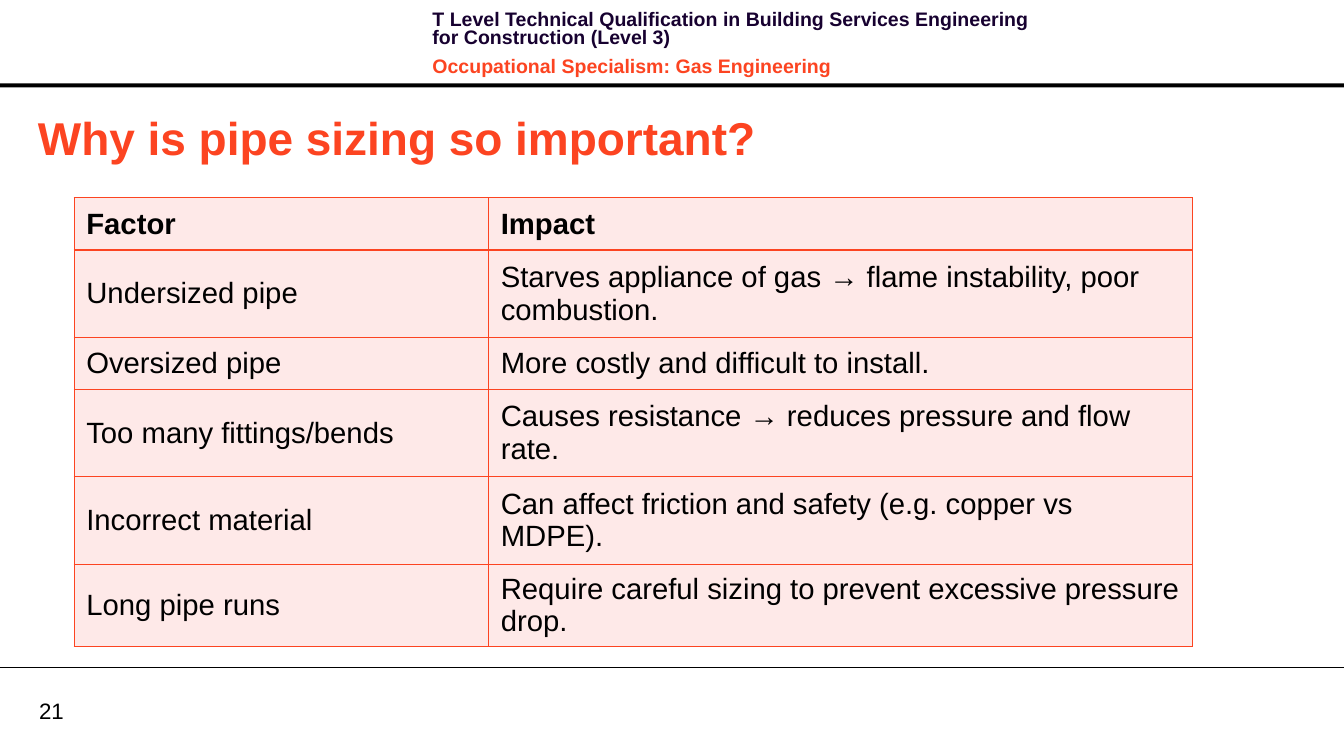
from dataclasses import dataclass

from lxml.etree import SubElement
from pptx import Presentation
from pptx.dml.color import RGBColor as Color
from pptx.enum.shapes import MSO_CONNECTOR as Connector, MSO_SHAPE as Shape
from pptx.enum.text import MSO_ANCHOR as Anchor
from pptx.oxml.ns import qn
from pptx.util import Inches, Pt

WIDTH, HEIGHT = Inches(13.39), Inches(7.48)


@dataclass(frozen=True)
class Theme:
    font: str = "Arial"
    accent: str = "FC4421"
    navy: str = "170130"
    black: str = "000000"
    cell: str = "FEE9E8"
    title_size: int = 33
    table_size: int = 21
    number_size: int = 16
    header_size: int = 14
    header_leading: float = 13.1


THEME = Theme()

HEADER = (
    ("T Level Technical Qualification in Building Services Engineering "
     "for Construction (Level 3)", THEME.navy),
    ("Occupational Specialism: Gas Engineering", THEME.accent),
)
FACTORS = (
    ("Factor", "Impact"),
    ("Undersized pipe",
     "Starves appliance of gas → flame instability, poor combustion."),
    ("Oversized pipe", "More costly and difficult to install."),
    ("Too many fittings/bends",
     "Causes resistance → reduces pressure and flow rate."),
    ("Incorrect material",
     "Can affect friction and safety (e.g. copper vs MDPE)."),
    ("Long pipe runs",
     "Require careful sizing to prevent excessive pressure drop."),
)
# Percentages of the slide's width and height
COLUMNS = (30.84, 52.35)
SHORT_ROW, TALL_ROW, LAST_ROW = 6.95, 11.63, 10.29
ROWS = (SHORT_ROW, TALL_ROW, SHORT_ROW, TALL_ROW, TALL_ROW, LAST_ROW)


def across(percent):
    return round(WIDTH * percent / 100)


def down(percent):
    return round(HEIGHT * percent / 100)


def area(left, top, width, height):
    return across(left), down(top), across(width), down(height)


def write(paragraph, text, size, color, bold=False):
    paragraph.text = text
    font = paragraph.font
    font.name, font.size, font.bold = THEME.font, Pt(size), bold
    font.color.rgb = Color.from_string(color)


def add_text_frame(slide, box, anchor=Anchor.MIDDLE):
    frame = slide.shapes.add_textbox(*box).text_frame
    frame.word_wrap = True
    frame.vertical_anchor = anchor
    return frame


def add_bar(slide, box):
    bar = slide.shapes.add_shape(Shape.RECTANGLE, *box)
    bar.shadow.inherit = False
    bar.fill.solid()
    bar.fill.fore_color.rgb = Color.from_string(THEME.black)
    bar.line.fill.background()


def add_rule(slide, top):
    rule = slide.shapes.add_connector(
        Connector.STRAIGHT, 0, down(top), WIDTH, down(top))
    rule.line.color.rgb = Color.from_string(THEME.black)
    rule.line.width = Pt(0.75)
    SubElement(rule._element.spPr, qn("a:effectLst"))


def add_header(slide, box):
    frame = add_text_frame(slide, box, Anchor.TOP)
    for index, (text, color) in enumerate(HEADER):
        paragraph = frame.add_paragraph() if index else frame.paragraphs[0]
        write(paragraph, text, THEME.header_size, color, bold=True)
        paragraph.line_spacing = Pt(THEME.header_leading)
        paragraph.space_before = Pt(4 if index else 0)
        paragraph.space_after = Pt(4)


def add_title(slide, box, text):
    paragraph = add_text_frame(slide, box).paragraphs[0]
    write(paragraph, text, THEME.title_size, THEME.accent, bold=True)
    paragraph.line_spacing = 0.9


def add_page_number(slide, box, number):
    frame = add_text_frame(slide, box)
    frame.margin_left = frame.margin_right = 0
    frame.margin_top = frame.margin_bottom = 0
    write(frame.paragraphs[0], number, THEME.number_size, THEME.black)


def style_cell(cell):
    cell.vertical_anchor = Anchor.MIDDLE
    cell.margin_left = cell.margin_right = Inches(0.12)
    cell.margin_top = cell.margin_bottom = Inches(0.06)
    # Borders come before the fill in the cell's properties
    properties = cell._tc.get_or_add_tcPr()
    for side in ("a:lnL", "a:lnR", "a:lnT", "a:lnB"):
        border = SubElement(properties, qn(side), w=str(Pt(1)))
        fill = SubElement(border, qn("a:solidFill"))
        SubElement(fill, qn("a:srgbClr"), val=THEME.accent)
    cell.fill.solid()
    cell.fill.fore_color.rgb = Color.from_string(THEME.cell)


def add_factor_table(slide, left, top):
    box = area(left, top, sum(COLUMNS), sum(ROWS))
    table = slide.shapes.add_table(len(ROWS), len(COLUMNS), *box).table
    table.horz_banding = False
    for column, width in zip(table.columns, COLUMNS):
        column.width = across(width)
    for index, (row, height) in enumerate(zip(table.rows, ROWS)):
        row.height = down(height)
        for cell, text in zip(row.cells, FACTORS[index]):
            style_cell(cell)
            write(cell.text_frame.paragraphs[0], text, THEME.table_size,
                  THEME.black, bold=index == 0)


def main():
    presentation = Presentation()
    presentation.slide_width, presentation.slide_height = WIDTH, HEIGHT
    slide = presentation.slides.add_slide(presentation.slide_layouts[6])

    # Header and footer
    add_bar(slide, area(0, 11.1, 100, 0.53))
    add_page_number(slide, area(2.91, 92.78, 4.78, 3.61), "21")
    add_rule(slide, 88.9)
    add_header(slide, area(31.44, 0.94, 47.57, 8.56))

    # Title and table
    add_title(slide, area(2.09, 14.44, 95, 8.56),
              "Why is pipe sizing so important?")
    add_factor_table(slide, 5.53, 26.34)

    presentation.save("out.pptx")


if __name__ == "__main__":
    main()
